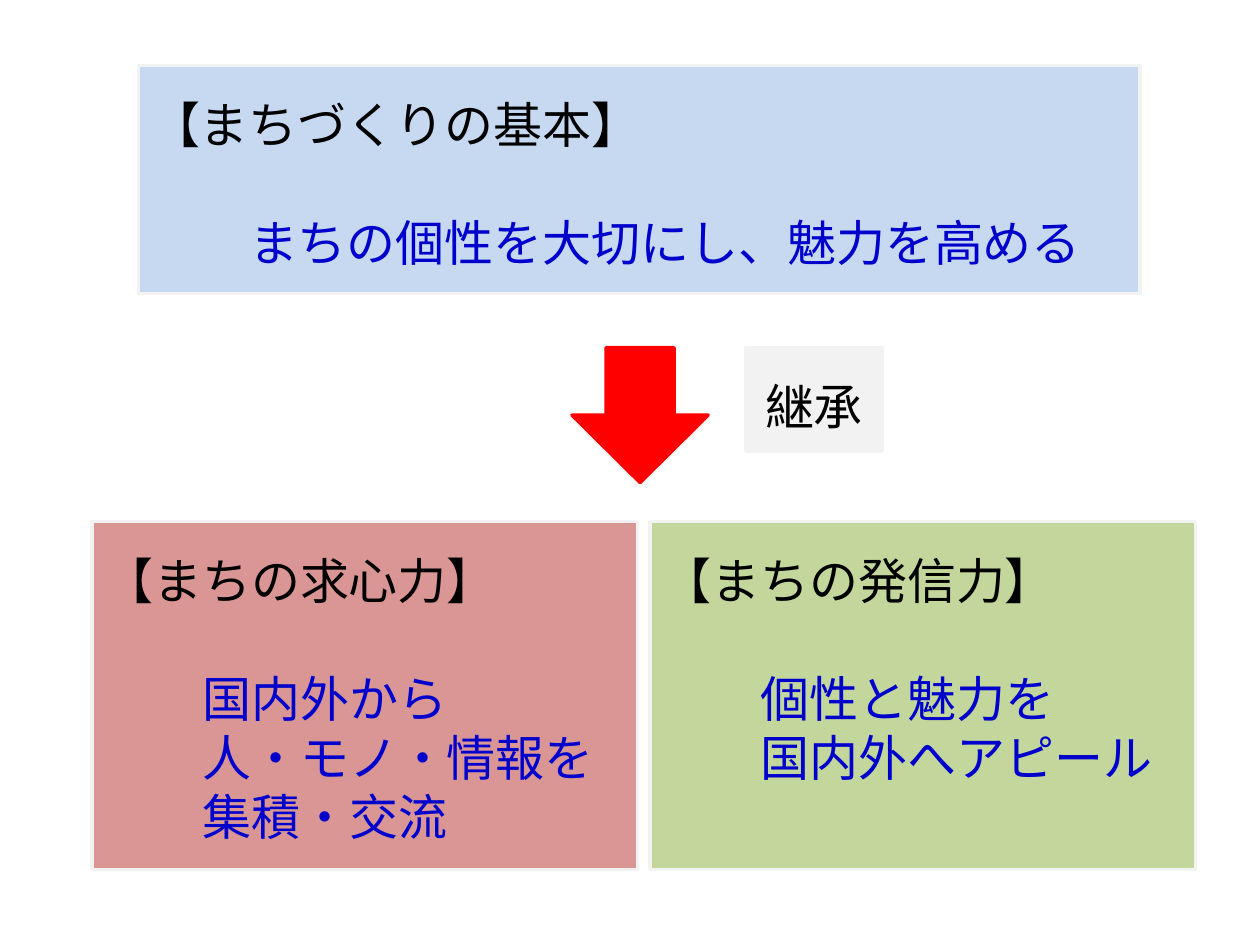
from pptx import Presentation
from pptx.dml.color import RGBColor
from pptx.enum.shapes import MSO_SHAPE
from pptx.enum.text import MSO_ANCHOR, PP_ALIGN
from pptx.oxml.ns import qn
from pptx.util import Inches, Pt

RECT, ARROW = MSO_SHAPE.RECTANGLE, MSO_SHAPE.DOWN_ARROW
TOP = MSO_ANCHOR.TOP
LEFT, CENTER = PP_ALIGN.LEFT, PP_ALIGN.CENTER

BLACK = RGBColor(0x00, 0x00, 0x00)
BLUE = RGBColor(0x00, 0x00, 0xCC)
RED = RGBColor(0xFF, 0x00, 0x00)
GREY = RGBColor(0xF2, 0xF2, 0xF2)
SKY = RGBColor(0xC6, 0xD9, 0xF1)
ROSE = RGBColor(0xD9, 0x96, 0x94)
GREEN = RGBColor(0xC3, 0xD6, 0x9B)

FONT = "Noto Sans CJK JP"
SIZE = 28
PITCH = Pt(33.7)
INDENT = Pt(2 * SIZE)


def add_block(slide, kind, left, top, width, height, fill, line=GREY):
    block = slide.shapes.add_shape(
        kind, Inches(left), Inches(top), Inches(width), Inches(height))
    block.shadow.inherit = False
    block.fill.solid()
    block.fill.fore_color.rgb = fill
    block.line.color.rgb = line
    block.line.width = Pt(2)
    frame = block.text_frame
    frame.word_wrap = True
    frame.vertical_anchor = TOP
    frame.margin_top = Inches(0.23)
    return block


def write(para, text, color=BLACK, align=LEFT, indent=0, before=0):
    para.alignment = align
    para.line_spacing = PITCH
    para.space_before = before
    props = para._p.get_or_add_pPr()
    props.set("marL", str(int(indent)))
    props.set("indent", "0")
    run = para.add_run()
    run.text = text
    run.font.size = Pt(SIZE)
    run.font.name = FONT
    run.font.color.rgb = color
    east = run._r.get_or_add_rPr().makeelement(qn("a:ea"), {"typeface": FONT})
    run.font._element.find(qn("a:latin")).addnext(east)


def add_panel(slide, place, fill, head, lines):
    """Draw a box with a heading, a one-line gap and indented lines."""
    frame = add_block(slide, RECT, *place, fill).text_frame
    write(frame.paragraphs[0], head)
    for i, text in enumerate(lines):
        write(frame.add_paragraph(), text, color=BLUE, indent=INDENT,
              before=0 if i else PITCH)


def main():
    deck = Presentation()
    deck.slide_width, deck.slide_height = Inches(10), Inches(7.5)
    slide = deck.slides.add_slide(deck.slide_layouts[6])

    add_panel(slide, (1.1, 0.52, 7.95, 1.81), SKY, "【まちづくりの基本】",
              ["まちの個性を大切にし、魅力を高める"])

    add_block(slide, ARROW, 4.54, 2.76, 1.08, 1.07, RED, line=RED)
    label = add_block(slide, RECT, 5.92, 2.76, 1.08, 0.82, GREY)
    write(label.text_frame.paragraphs[0], "継承", align=CENTER)

    powers = [
        (ROSE, "【まちの求心力】",
         ["国内外から", "人・モノ・情報を", "集積・交流"]),
        (GREEN, "【まちの発信力】",
         ["個性と魅力を", "国内外へアピール"]),
    ]
    width, gap = 4.33, 0.1
    for i, (fill, head, lines) in enumerate(powers):
        left = 0.73 + i * (width + gap)
        add_panel(slide, (left, 4.14, width, 2.76), fill, head, lines)

    deck.save("out.pptx")


if __name__ == "__main__":
    main()
